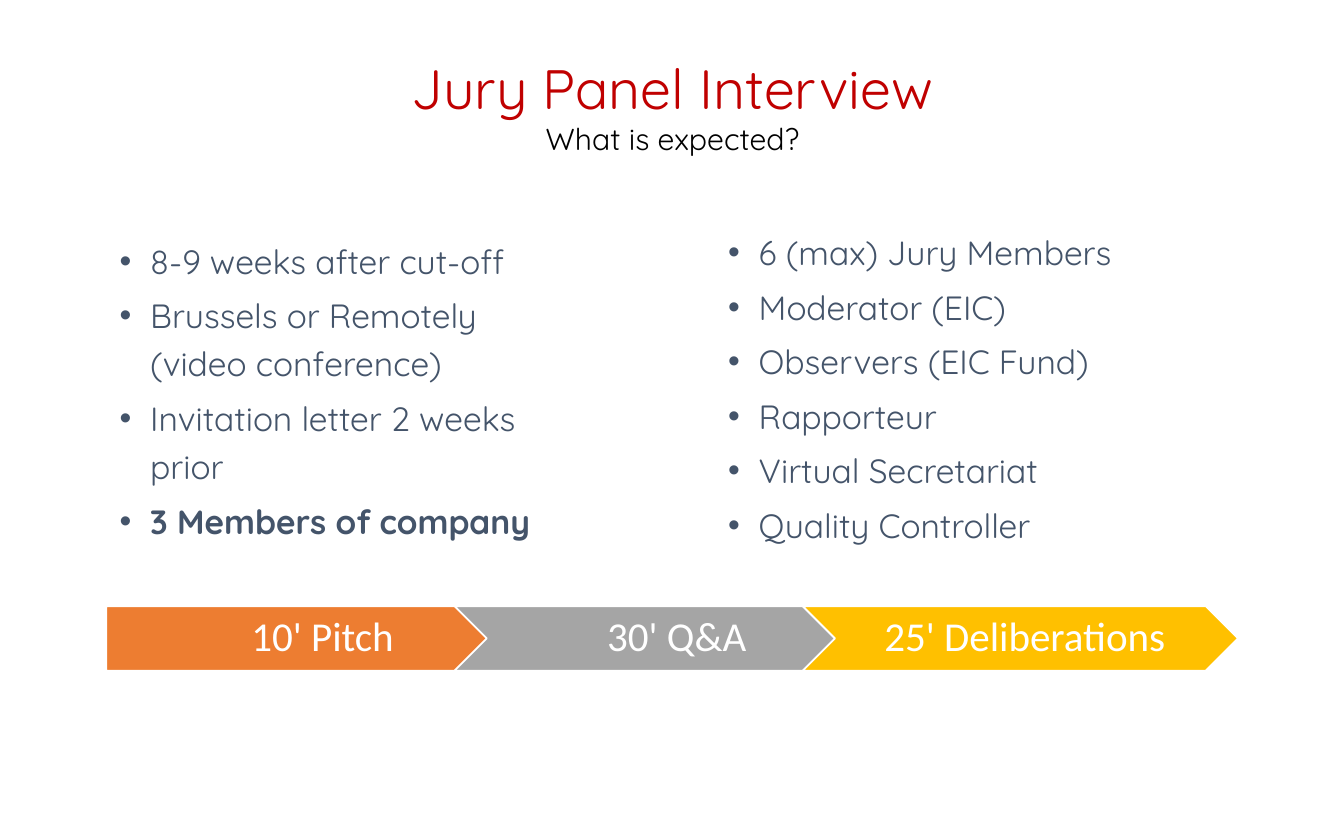
from lxml import etree
from pptx import Presentation
from pptx import util as u
from pptx.dml.color import RGBColor
from pptx.enum import shapes, text
from pptx.oxml.ns import qn

COLORS = {
    "title": "C00000",
    "subtitle": "000000",
    "list": "44546A",
    "white": "FFFFFF",
    "pitch": "ED7D31",
    "questions": "A5A5A5",
    "deliberations": "FFC000",
}
HEADING_FONT, STEP_FONT = "Quicksand", "Calibri"

LOGISTICS = [
    "8-9 weeks after cut-off",
    "Brussels or Remotely (video conference)",
    "Invitation letter 2 weeks prior",
    "3 Members of company",
]
PANEL = [
    "6 (max) Jury Members",
    "Moderator (EIC)",
    "Observers (EIC Fund)",
    "Rapporteur",
    "Virtual Secretariat",
    "Quality Controller",
]
STEPS = [
    ("10' Pitch", "pitch", shapes.MSO_SHAPE.PENTAGON, 0.33),
    ("30' Q&A", "questions", shapes.MSO_SHAPE.CHEVRON, 0.25),
    ("25' Deliberations", "deliberations", shapes.MSO_SHAPE.CHEVRON, 0.25),
]


def color(name):
    return RGBColor.from_string(COLORS[name])


def add_run(paragraph, words, size, font, color_name, bold=False):
    run = paragraph.add_run()
    run.text = words
    run.font.size = u.Pt(size)
    run.font.name = font
    run.font.bold = bold
    run.font.color.rgb = color(color_name)


def add_frame(slide, left, top, width, height):
    box = slide.shapes.add_textbox(u.Cm(left), u.Cm(top), u.Cm(width), u.Cm(height))
    box.text_frame.word_wrap = True
    return box.text_frame


def add_bullet(paragraph, indent):
    properties = paragraph._p.get_or_add_pPr()
    properties.set("marL", str(u.Cm(indent)))
    properties.set("indent", str(-u.Cm(indent)))
    etree.SubElement(properties, qn("a:buFont")).set("typeface", "Arial")
    etree.SubElement(properties, qn("a:buChar")).set("char", "•")


def add_heading(slide):
    frame = add_frame(slide, 1.24, 0.94, 22.94, 2.11)
    frame.vertical_anchor = text.MSO_ANCHOR.MIDDLE
    heading = frame.paragraphs[0]
    heading.alignment = text.PP_ALIGN.CENTER
    heading.space_after = u.Pt(6)
    add_run(heading, "Jury Panel Interview", 29.7, HEADING_FONT, "title")
    heading.add_line_break()
    add_run(heading, "What is expected?", 16.2, HEADING_FONT, "subtitle")


def add_list(slide, left, top, height, items, bold_item=None):
    frame = add_frame(slide, left, top, 8.84, height)
    for number, item in enumerate(items):
        entry = frame.add_paragraph() if number else frame.paragraphs[0]
        add_bullet(entry, 0.58)
        entry.line_spacing = 1.2
        entry.space_before = u.Pt(1.1 if number else 0)
        entry.space_after = u.Pt(2.2)
        add_run(entry, item, 18, HEADING_FONT, "list", bold=item == bold_item)


def add_step(slide, left, label, fill, outline, inset):
    step = slide.shapes.add_shape(outline, u.Cm(left), u.Cm(11.46), u.Cm(8.23), u.Cm(1.22))
    step.shadow.inherit = False
    step.fill.solid()
    step.fill.fore_color.rgb = color(fill)
    step.line.color.rgb = color("white")
    step.line.width = u.Pt(1)
    frame = step.text_frame
    frame.word_wrap = True
    frame.vertical_anchor = text.MSO_ANCHOR.MIDDLE
    frame.margin_left, frame.margin_right = u.Cm(inset), u.Cm(0.08)
    frame.margin_top = frame.margin_bottom = u.Cm(0.15)
    caption = frame.paragraphs[0]
    caption.alignment = text.PP_ALIGN.CENTER
    caption.line_spacing = 0.9
    add_run(caption, label, 22, STEP_FONT, "white")


def main():
    deck = Presentation()
    deck.slide_width, deck.slide_height = u.Cm(25.4), u.Cm(15.88)
    slide = deck.slides.add_slide(deck.slide_layouts[6])

    # Title and subtitle
    add_heading(slide)

    # Logistics on the left, panel on the right
    add_list(slide, 2.01, 4.27, 6.02, LOGISTICS, bold_item=LOGISTICS[-1])
    add_list(slide, 13.51, 4.11, 6.25, PANEL)

    # Interview timeline
    for number, (label, fill, outline, inset) in enumerate(STEPS):
        add_step(slide, 2.01 + number * 6.58, label, fill, outline, inset)

    deck.save("out.pptx")


if __name__ == "__main__":
    main()
